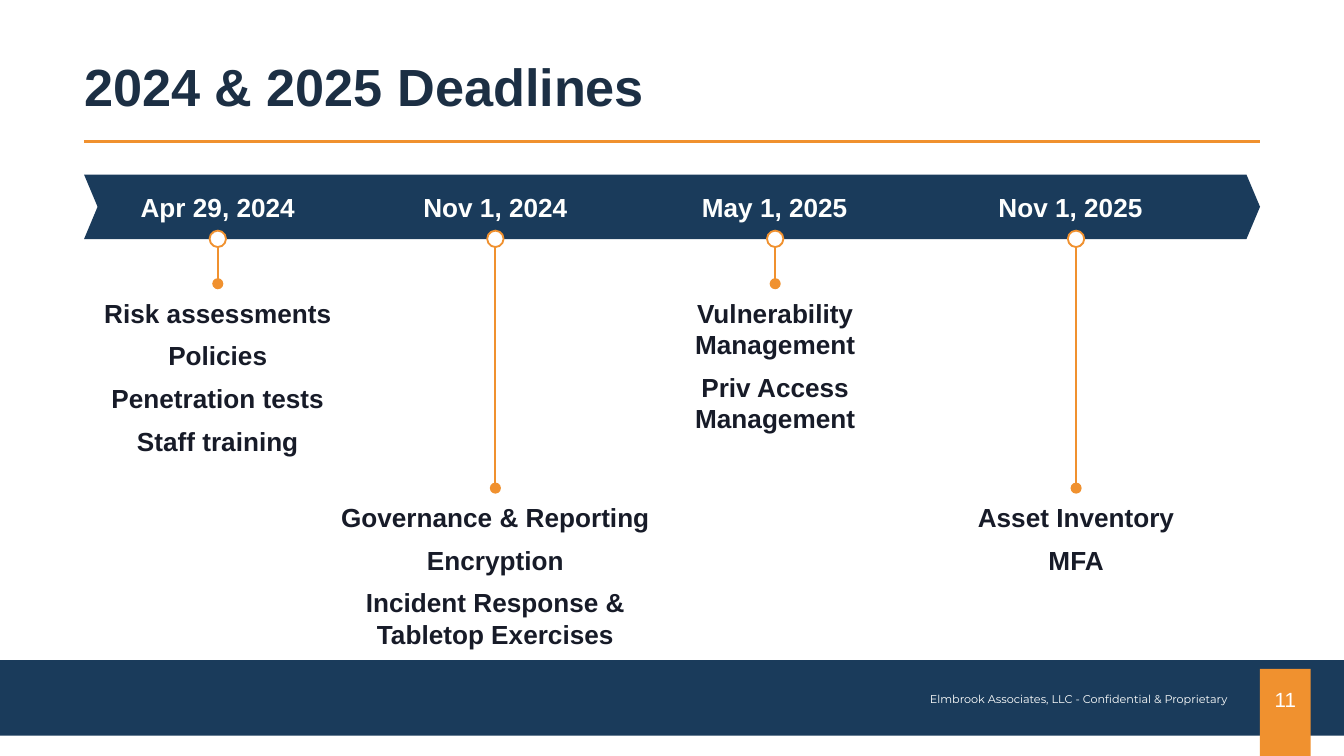
from lxml import etree
from pptx import Presentation
from pptx.dml.color import RGBColor
from pptx.enum.shapes import MSO_CONNECTOR, MSO_SHAPE
from pptx.enum.text import MSO_ANCHOR, PP_ALIGN
from pptx.oxml.ns import qn
from pptx.util import Pt

RECTANGLE, CHEVRON, OVAL = MSO_SHAPE.RECTANGLE, MSO_SHAPE.CHEVRON, MSO_SHAPE.OVAL
STRAIGHT = MSO_CONNECTOR.STRAIGHT
LEFT, CENTER, RIGHT = PP_ALIGN.LEFT, PP_ALIGN.CENTER, PP_ALIGN.RIGHT
TOP, MIDDLE, BOTTOM = MSO_ANCHOR.TOP, MSO_ANCHOR.MIDDLE, MSO_ANCHOR.BOTTOM

COLORS = {
    "navy": "1A3B5B",
    "orange": "F0912F",
    "title": "1C2F44",
    "task": "171B28",
    "white": "FFFFFF",
    "light": "FEFFFE",
}

MARGIN, CONTENT_WIDTH = 45, 630
MARKER_SIZE, MARKER_CENTER = 8.8, 128
DATE_WIDTH = 90
SHORT_END, LONG_END = 152, 261.5

# date, date centre, marker centre, stem end, task width, tasks
DEADLINES = [
    ("Apr 29, 2024", 116.7, 116.7, SHORT_END, 144,
     ["Risk assessments", "Policies", "Penetration tests", "Staff training"]),
    ("Nov 1, 2024", 265.4, 265.4, LONG_END, 212,
     ["Governance & Reporting", "Encryption",
      "Incident Response & Tabletop Exercises"]),
    ("May 1, 2025", 415, 415.3, SHORT_END, 144,
     ["Vulnerability Management", "Priv Access Management"]),
    ("Nov 1, 2025", 573.5, 576.5, LONG_END, 144,
     ["Asset Inventory", "MFA"]),
]


def color(name):
    return RGBColor.from_string(COLORS[name])


def add_block(slide, preset, left, top, width, height, fill, outline=None):
    block = slide.shapes.add_shape(preset, Pt(left), Pt(top), Pt(width), Pt(height))
    block.shadow.inherit = False
    block.fill.solid()
    block.fill.fore_color.rgb = color(fill)
    if outline:
        block.line.color.rgb = color(outline)
        block.line.width = Pt(1)
    else:
        block.line.fill.background()
    return block


def write(shape, paragraphs, size, ink, bold=False, font="Arial", align=CENTER,
          anchor=MIDDLE, margins=(0, 0, 0, 0), wrap=True, spacing=None, after=0):
    """Fill a shape with evenly styled paragraphs; margins run left, top, right, bottom."""
    frame = shape.text_frame
    frame.word_wrap = wrap
    frame.vertical_anchor = anchor
    (frame.margin_left, frame.margin_top,
     frame.margin_right, frame.margin_bottom) = map(Pt, margins)
    frame.text = "\n".join(paragraphs)
    for paragraph in frame.paragraphs:
        paragraph.alignment = align
        paragraph.space_after = Pt(after)
        if spacing:
            paragraph.line_spacing = spacing
        paragraph.font.name = font
        paragraph.font.size = Pt(size)
        paragraph.font.bold = bold
        paragraph.font.color.rgb = color(ink)


def add_text(slide, left, top, width, height, paragraphs, size, ink, **style):
    box = slide.shapes.add_textbox(Pt(left), Pt(top), Pt(width), Pt(height))
    write(box, paragraphs, size, ink, **style)


def add_line(slide, start, end, width, dot_end=False):
    line = slide.shapes.add_connector(STRAIGHT, *map(Pt, start + end))
    line.line.color.rgb = color("orange")
    line.line.width = Pt(width)
    if dot_end:
        outline = line._element.spPr.find(qn("a:ln"))
        etree.SubElement(outline, qn("a:tailEnd"), type="oval")
    etree.SubElement(line._element.spPr, qn("a:effectLst"))


def add_frame(slide):
    """Title, rule, footer band and page number."""
    add_block(slide, RECTANGLE, 0, 353.6, 720, 40.5, "navy")
    add_line(slide, (MARGIN, 75.8), (MARGIN + CONTENT_WIDTH, 75.8), 1.5)
    page = add_block(slide, RECTANGLE, 675, 358.4, 27.2, 46.6, "orange")
    write(page, ["11"], 11, "white", margins=(0, 0, 0, 14.4), wrap=False)
    add_text(slide, 488, 367.2, 176.5, 14.4,
             ["Elmbrook Associates, LLC - Confidential & Proprietary"], 6, "light",
             font="Montserrat", align=RIGHT, margins=(7.2, 3.6, 7.2, 3.6), wrap=False)
    add_text(slide, MARGIN, 31.7, CONTENT_WIDTH, 31.7, ["2024 & 2025 Deadlines"],
             28, "title", bold=True, align=LEFT, anchor=BOTTOM, spacing=0.9)


def add_deadline(slide, date, date_center, center, stem_end, task_width, tasks):
    add_text(slide, date_center - DATE_WIDTH / 2, 102.5, DATE_WIDTH, 17, [date],
             14, "light", bold=True, wrap=False)
    radius = MARKER_SIZE / 2
    add_line(slide, (center, MARKER_CENTER + radius), (center, stem_end), 1, dot_end=True)
    add_block(slide, OVAL, center - radius, MARKER_CENTER - radius,
              MARKER_SIZE, MARKER_SIZE, "white", "orange")
    add_text(slide, center - task_width / 2, stem_end, task_width, 94, tasks, 14, "task",
             bold=True, anchor=TOP, margins=(7.2, 7.2, 7.2, 7.2), after=6)


def main():
    deck = Presentation()
    deck.slide_width, deck.slide_height = Pt(720), Pt(405)
    slide = deck.slides.add_slide(deck.slide_layouts[6])
    add_frame(slide)
    timeline = add_block(slide, CHEVRON, MARGIN, 93.5, CONTENT_WIDTH, 34.6, "navy")
    timeline.adjustments[0] = 0.21
    for deadline in DEADLINES:
        add_deadline(slide, *deadline)
    deck.save("out.pptx")


if __name__ == "__main__":
    main()
